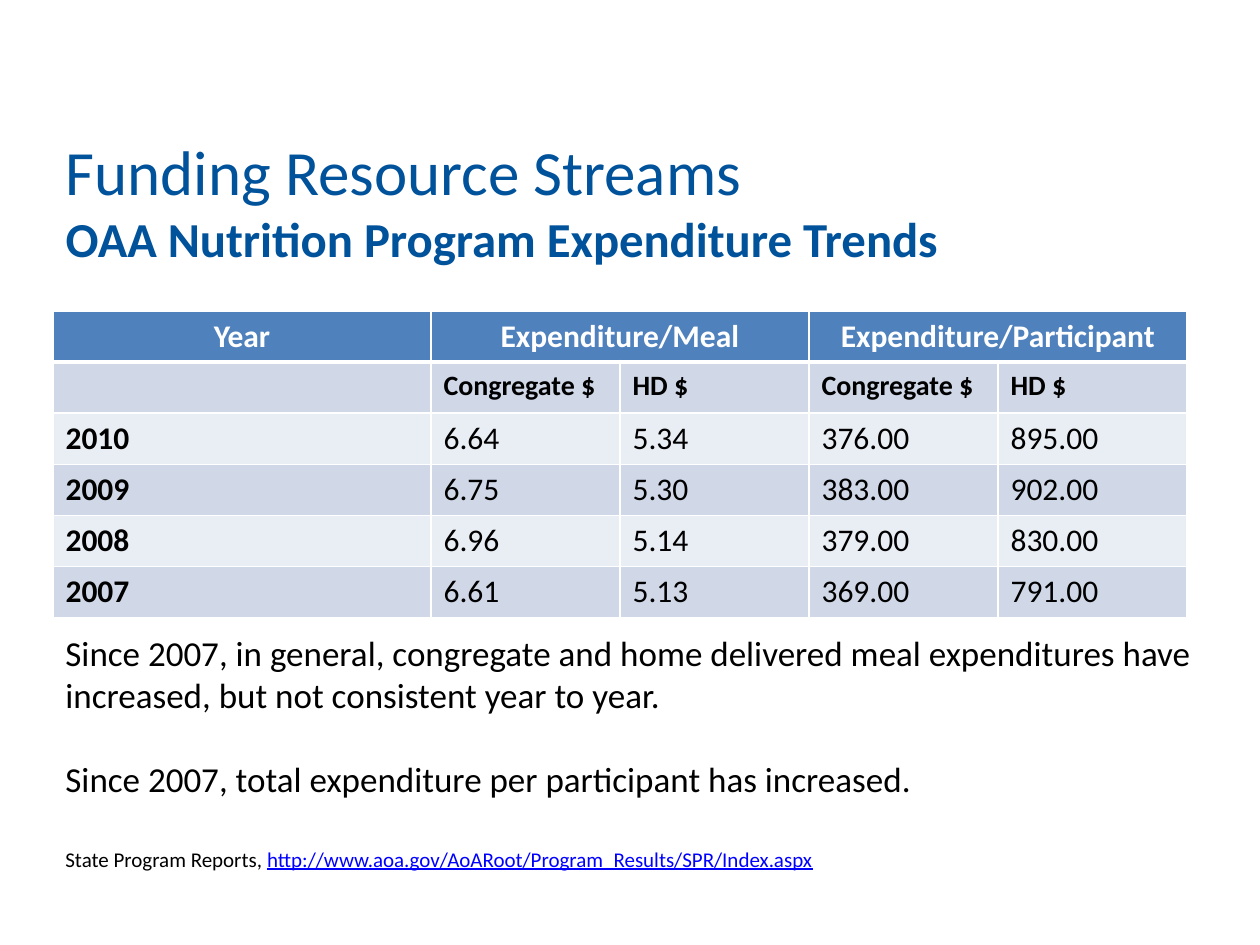
"""Build the slide on nutrition program expenditure trends."""
from typing import NamedTuple

from lxml.etree import SubElement
from pptx import Presentation
from pptx.dml.color import RGBColor as Rgb
from pptx.enum.text import MSO_ANCHOR as Anchor, MSO_AUTO_SIZE as Fit, PP_ALIGN as Align
from pptx.oxml.ns import qn
from pptx.util import Pt

SCALE = 914400 / 126
HUES = {
    "title": "00529B", "head": "4F81BD", "dark": "D0D8E8", "light": "E9EDF4",
    "text": "000000", "link": "0000FF", "white": "FFFFFF",
}


class Box(NamedTuple):
    """Place and size in px."""
    x: int
    y: int
    w: int
    h: int


class Look(NamedTuple):
    """Size, colour and weight of a run."""
    size: float
    hue: str = "text"
    bold: bool = False
    line: bool = False


ROWS = [
    ["Year", "Expenditure/Meal", "", "Expenditure/Participant", ""],
    ["", "Congregate $", "HD $", "Congregate $", "HD $"],
    ["2010", "6.64", "5.34", "376.00", "895.00"],
    ["2009", "6.75", "5.30", "383.00", "902.00"],
    ["2008", "6.96", "5.14", "379.00", "830.00"],
    ["2007", "6.61", "5.13", "369.00", "791.00"],
]
COLS = [378, 189, 189, 189, 189]
ROW = 51
HEAD = Look(18, "white", True)
SUB = Look(16, bold=True)


def px(num: int) -> int:
    return round(num * SCALE)


def emu(box: Box) -> list[int]:
    return [px(num) for num in box]


def style(run, look: Look) -> None:
    font = run.font
    font.name, font.size = "Calibri", Pt(look.size)
    font.bold, font.underline = look.bold, look.line
    font.color.rgb = Rgb.from_string(HUES[look.hue])


def edge(cell, row: int) -> None:
    props = cell._tc.get_or_add_tcPr()
    thick = {0: "lnB", 1: "lnT"}.get(row)
    for spot, tag in enumerate(("lnL", "lnR", "lnT", "lnB")):
        line = SubElement(props, qn(f"a:{tag}"), w=str(Pt(3 if tag == thick else 1)))
        fill = SubElement(line, qn("a:solidFill"))
        SubElement(fill, qn("a:srgbClr"), val=HUES["white"])
        props.insert(spot, line)


def add_title(slide, box: Box) -> None:
    shape = slide.shapes.title
    shape.left, shape.top, shape.width, shape.height = emu(box)
    frame = shape.text_frame
    frame.auto_size, frame.vertical_anchor = Fit.NONE, Anchor.MIDDLE
    frame.margin_top, frame.margin_bottom = 0, px(60)
    frame.text = "Funding Resource Streams\vOAA Nutrition Program Expenditure Trends"
    para = frame.paragraphs[0]
    para.alignment = Align.LEFT
    for run, look in zip(para.runs, (Look(36, "title"), Look(27.9, "title", True))):
        style(run, look)


def add_grid(slide, box: Box) -> None:
    table = slide.shapes.add_table(len(ROWS), len(COLS), *emu(box)).table
    for col, width in zip(table.columns, COLS):
        col.width = px(width)
    for r, texts in enumerate(ROWS):
        table.rows[r].height = px(ROW)
        tone = "head" if r == 0 else "dark" if r % 2 else "light"
        for c, text in enumerate(texts):
            cell = table.cell(r, c)
            cell.fill.solid()
            cell.fill.fore_color.rgb = Rgb.from_string(HUES[tone])
            edge(cell, r)
            cell.text = text
            para = cell.text_frame.paragraphs[0]
            para.alignment = Align.LEFT if r else Align.CENTER
            look = (HEAD, SUB)[r] if r < 2 else Look(18, bold=c == 0)
            for run in para.runs:
                style(run, look)
    for c in (1, 3):
        table.cell(0, c).merge(table.cell(0, c + 1))


def add_text(slide, box: Box, paras: list[list[tuple[str, Look]]],
             gap: int = 0, wrap: bool = True) -> None:
    frame = slide.shapes.add_textbox(*emu(box)).text_frame
    frame.word_wrap, frame.auto_size = wrap, Fit.SHAPE_TO_FIT_TEXT
    for i, parts in enumerate(paras):
        para = frame.add_paragraph() if i else frame.paragraphs[0]
        if i:
            para.space_before = Pt(gap)
        for text, look in parts:
            run = para.add_run()
            run.text = text
            style(run, look)


def main() -> None:
    deck = Presentation()
    deck.slide_width, deck.slide_height = px(1260), px(945)
    slide = deck.slides.add_slide(deck.slide_layouts[5])
    add_title(slide, Box(53, 188, 1134, 84))
    add_grid(slide, Box(53, 311, sum(COLS), ROW * len(ROWS)))
    notes = [
        "Since 2007, in general, congregate and home delivered meal expenditures "
        "have increased, but not consistent year to year.",
        "Since 2007, total expenditure per participant has increased.",
    ]
    add_text(slide, Box(53, 625, 1179, 212), [[(note, Look(20))] for note in notes], gap=24)
    credit = [
        ("State Program Reports, ", Look(12)),
        ("http://www.aoa.gov/AoARoot/Program_Results/SPR/Index.aspx",
         Look(12, "link", line=True)),
    ]
    add_text(slide, Box(53, 840, 786, 38), [credit], wrap=False)
    deck.save("out.pptx")


if __name__ == "__main__":
    main()
